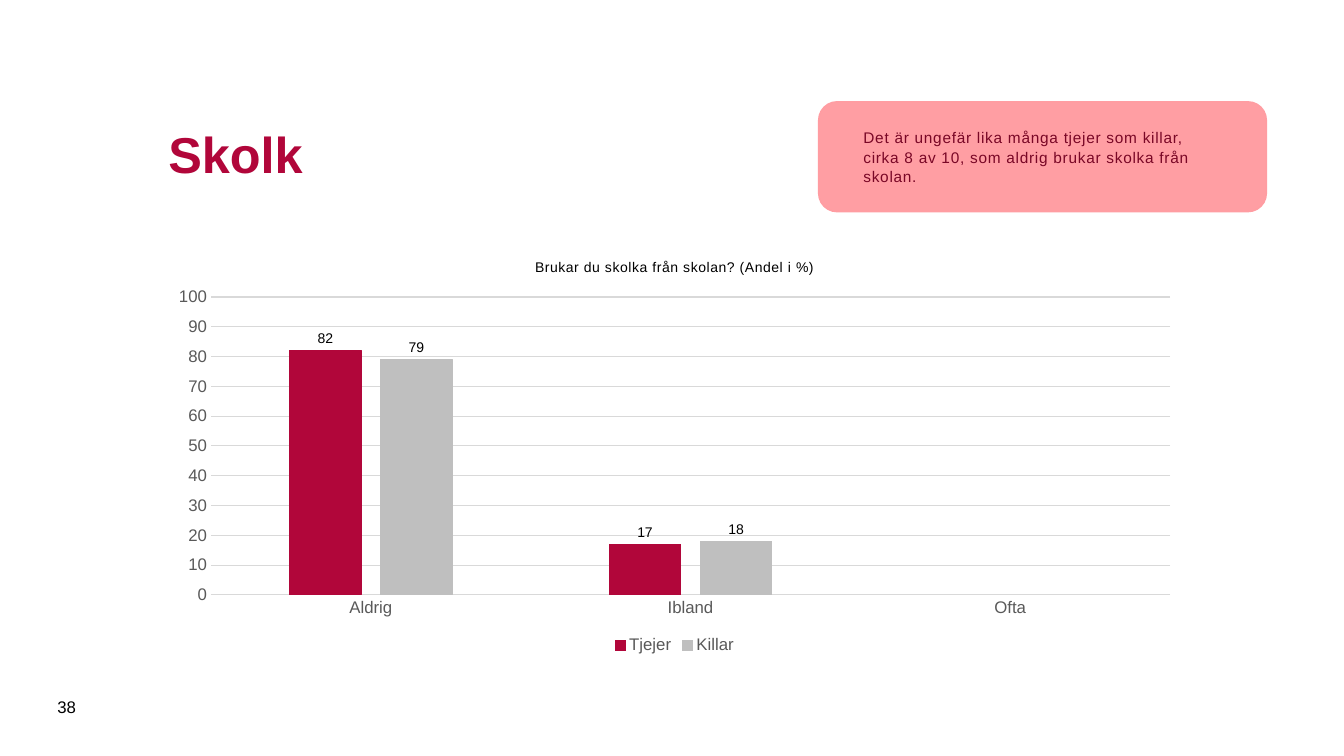
from lxml import etree
from pptx import Presentation
from pptx import util as u
from pptx.chart.data import CategoryChartData
from pptx.dml.color import RGBColor
from pptx.enum import chart as ch, shapes, text
from pptx.oxml.ns import qn

# Content
TITLE = "Skolk"
PAGE_NUMBER = "38"
MESSAGE = ("Det är ungefär lika många tjejer som killar, cirka 8 av 10, "
           "som aldrig brukar skolka från skolan.")
QUESTION = "Brukar du skolka från skolan? (Andel i %)"
ANSWERS = ["Aldrig", "Ibland", "Ofta"]
FONT = "Arial"
NUMBER_FORMAT = "#,##0;#,##0"

CRIMSON = RGBColor(0xB1, 0x06, 0x3A)
WINE = RGBColor(0x79, 0x07, 0x26)
PINK = RGBColor(0xFF, 0x9D, 0xA2)
SILVER = RGBColor(0xBF, 0xBF, 0xBF)
GRID = RGBColor(0xD9, 0xD9, 0xD9)
GREY = RGBColor(0x59, 0x59, 0x59)
BLACK = RGBColor(0, 0, 0)

SERIES = [("Tjejer", (82, 17, None), CRIMSON),
          ("Killar", (79, 18, None), SILVER)]

# Left, top, width, height in inches
TITLE_AREA = (1.57, 0.81, 10.24, 1.42)
NUMBER_AREA = (0.47, 6.81, 0.57, 0.4)
CHART_AREA = (1.57, 2.4, 10.24, 4.13)
MESSAGE_AREA = (8.12, 1.01, 4.44, 1.09)


def inches(area):
    return [u.Inches(value) for value in area]


def style_font(font, size, color, bold=False):
    font.name, font.size, font.bold = FONT, u.Pt(size), bold
    font.color.rgb = color


def write(frame, words, size, color, bold=False, tracking=0, margins=(0.1, 0.05),
          spacing=None):
    frame.word_wrap = True
    frame.auto_size = text.MSO_AUTO_SIZE.NONE
    frame.vertical_anchor = text.MSO_ANCHOR.MIDDLE
    frame.margin_left = frame.margin_right = u.Inches(margins[0])
    frame.margin_top = frame.margin_bottom = u.Inches(margins[1])
    para = frame.paragraphs[0]
    para.alignment = text.PP_ALIGN.LEFT
    if spacing:
        para.line_spacing = spacing
    span = para.add_run()
    span.text = words
    style_font(span.font, size, color, bold)
    if tracking:
        span.font._element.set("spc", str(int(tracking * 100)))


deck = Presentation()
deck.slide_width, deck.slide_height = u.Inches(13.33), u.Inches(7.5)
page = deck.slides.add_slide(deck.slide_layouts[5])

# Title and page number
title = page.shapes.title
title.left, title.top, title.width, title.height = inches(TITLE_AREA)
write(title.text_frame, TITLE, 36, CRIMSON, bold=True)
number = page.shapes.add_textbox(*inches(NUMBER_AREA))
write(number.text_frame, PAGE_NUMBER, 12, BLACK)

# Chart
data = CategoryChartData(number_format=NUMBER_FORMAT)
data.categories = ANSWERS
for name, values, _ in SERIES:
    data.add_series(name, values)
chart = page.shapes.add_chart(ch.XL_CHART_TYPE.COLUMN_CLUSTERED,
                              *inches(CHART_AREA), data).chart
style_font(chart.font, 10, BLACK)
chart.has_title = True
write(chart.chart_title.text_frame, QUESTION, 10, BLACK, tracking=0.5)
chart.chart_title.include_in_layout = False
chart.has_legend = True
chart.legend.position = ch.XL_LEGEND_POSITION.BOTTOM
chart.legend.include_in_layout = False
style_font(chart.legend.font, 12, GREY)

# Columns and labels
plot = chart.plots[0]
plot.gap_width, plot.overlap, plot.vary_by_categories = 219, -27, False
for series, (_, _, color) in zip(plot.series, SERIES):
    series.format.fill.solid()
    series.format.fill.fore_color.rgb = color
    series.format.line.color.rgb = color
    series.format.line.width = u.Pt(0.75)
    labels = series.data_labels
    labels.show_value = True
    labels.position = ch.XL_LABEL_POSITION.OUTSIDE_END
    labels.number_format, labels.number_format_is_linked = NUMBER_FORMAT, False
    style_font(labels.font, 10, BLACK)

# Axes
answers, share = chart.category_axis, chart.value_axis
for axis in (answers, share):
    axis.major_tick_mark = axis.minor_tick_mark = ch.XL_TICK_MARK.NONE
    style_font(axis.tick_labels.font, 12, GREY)
share.minimum_scale, share.maximum_scale, share.major_unit = 0, 100, 10
share.tick_labels.number_format = NUMBER_FORMAT
share.tick_labels.number_format_is_linked = False
share.format.line.fill.background()
for line in (answers.format.line, share.major_gridlines.format.line):
    line.color.rgb, line.width = GRID, u.Pt(0.75)

# Message box
box = page.shapes.add_shape(shapes.MSO_SHAPE.ROUNDED_RECTANGLE, *inches(MESSAGE_AREA))
box.shadow.inherit = False
box.fill.solid()
box.fill.fore_color.rgb = PINK
tint = box.fill._xPr.find(qn("a:solidFill"))[0]
etree.SubElement(tint, qn("a:alpha"), val="98000")
box.line.color.rgb, box.line.width = PINK, u.Pt(1)
write(box.text_frame, MESSAGE, 11, WINE, tracking=0.5, margins=(0.39, 0.2), spacing=1.05)

deck.save("out.pptx")
